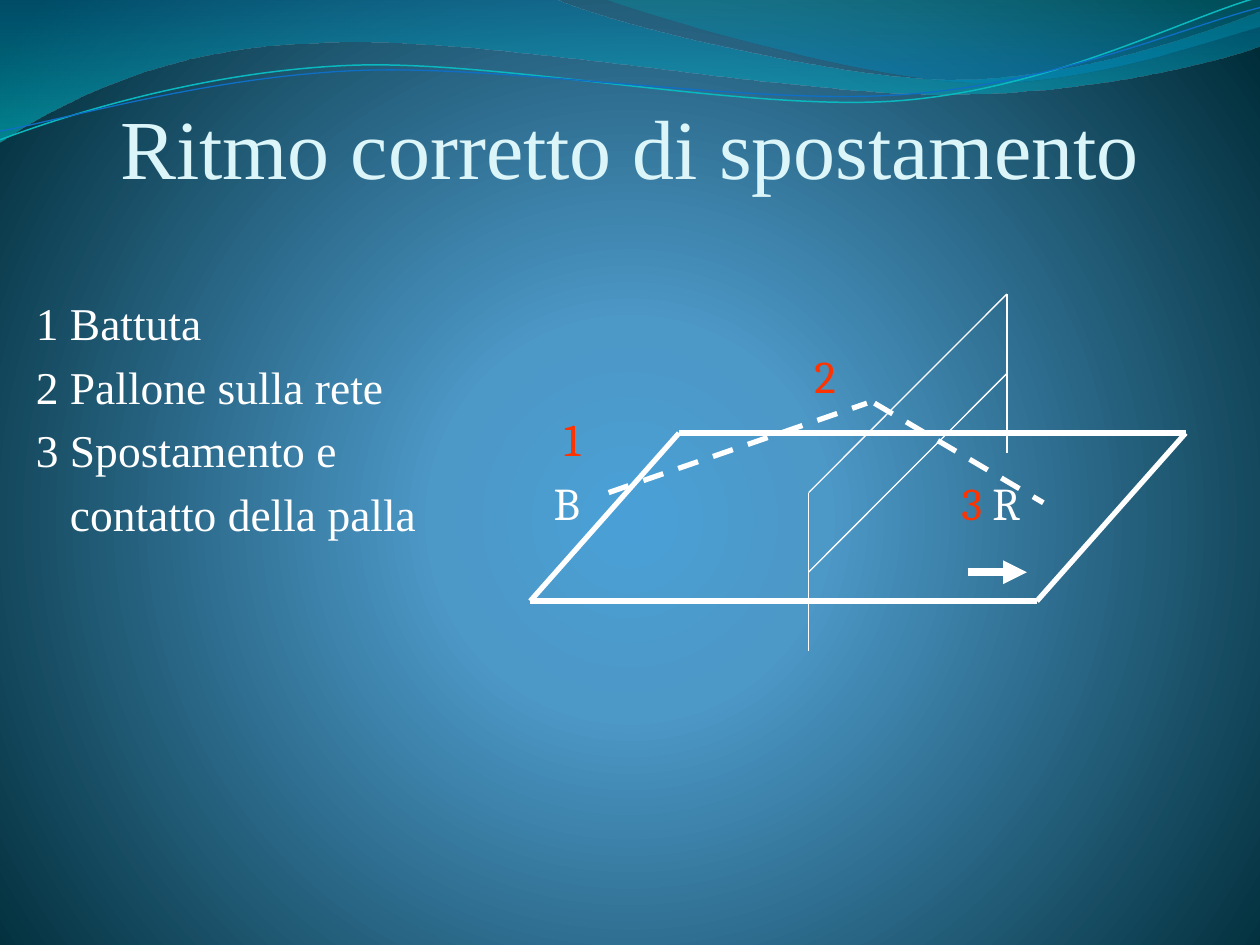
from dataclasses import dataclass

from lxml import etree
from pptx import Presentation
from pptx.dml.color import RGBColor
from pptx.enum.dml import MSO_LINE
from pptx.enum.shapes import MSO_CONNECTOR
from pptx.enum.text import MSO_ANCHOR, PP_ALIGN
from pptx.oxml.ns import qn
from pptx.util import Pt

DASH = MSO_LINE.DASH
STRAIGHT = MSO_CONNECTOR.STRAIGHT
BOTTOM = MSO_ANCHOR.BOTTOM
LEFT, CENTER = PP_ALIGN.LEFT, PP_ALIGN.CENTER


@dataclass(frozen=True)
class Theme:
    """Colours, fonts and sizes of the slide."""
    white: str = "FFFFFF"
    red: str = "FF3300"
    pale: str = "DBF5F9"
    aqua: str = "0AB8BF"
    blue: str = "0F6FC6"
    serif: str = "Times New Roman"
    label: str = "Cambria"
    head: float = 48
    body: float = 26
    gap: float = 5.2
    thin: float = 0.75
    bold: float = 3
    heavy: float = 4.5
    back: tuple = ((0, "4AA0D6", 100), (25, "4C98C7", 100), (100, "002C38", 100))
    deep: tuple = ((0, "0074A1", 45), (100, "00C6CF", 55))
    teal: tuple = ((0, "00A1A9", 30), (80, "008BBF", 45))


T = Theme()

BANDS = [
    (T.deep, (0, 0), [
        (316.8, -0.7),
        (342.7, 12.2, 478.1, 45.4, 545.8, 45.4),
        (614.2, 45.4, 689.8, 18.7, 720, 6.5),
        (720.7, 25.9),
        (707.8, 31.7, 626.4, 54.7, 537.1, 54),
        (447.8, 54, 275, 20.2, 185, 24.5),
        (92.9, 25.9, 33.1, 59.8, -0.7, 81.4)]),
    (T.teal, (344.9, -0.7), [
        (366.5, 7.9, 491, 44.6, 553.7, 46.8),
        (616.3, 49.7, 691.9, 23, 720, 15.1),
        (720, 0)]),
]
CURLS = [
    (T.aqua, 0.85, (0, 79.9), [
        (34.6, 67, 113.8, 41, 199.4, 37.4),
        (284.4, 33.8, 427, 64.1, 513.4, 57.6),
        (599.8, 51.1, 675.4, 10.8, 718.6, -1.4)]),
    (T.blue, 0.75, (0, 74.9), [
        (33.8, 69.1, 118.1, 43.9, 203.8, 40.3),
        (290.2, 36.7, 429.8, 60.5, 516.2, 54),
        (601.9, 48.2, 677.5, 15.1, 720, 4.3)]),
]


def rgb(code):
    """Turn a hex code into a colour."""
    return RGBColor.from_string(code)


def apply(item, values):
    """Set each attribute named in a dict."""
    for name, value in values.items():
        setattr(item, name, value)


def blend(node, stops, focus=None):
    """Swap a solid fill under node for a gradient."""
    old = node.find(qn("a:solidFill"))
    grad = etree.Element(qn("a:gradFill"), rotWithShape="1")
    row = etree.SubElement(grad, qn("a:gsLst"))
    for pos, code, alpha in stops:
        stop = etree.SubElement(row, qn("a:gs"), pos=str(pos * 1000))
        tone = etree.SubElement(stop, qn("a:srgbClr"), val=code)
        if alpha < 100:
            etree.SubElement(tone, qn("a:alpha"), val=str(alpha * 1000))
    if focus:
        way = etree.SubElement(grad, qn("a:path"), path="circle")
        sides = {side: str(part * 1000) for side, part in zip("ltrb", focus)}
        etree.SubElement(way, qn("a:fillToRect"), **sides)
    else:
        etree.SubElement(grad, qn("a:lin"), ang="5400000", scaled="0")
    node.replace(old, grad)


def outline(slide, box, start, moves, close):
    """Draw an outline of straight and cubic moves inside the box."""
    x, y = box[:2]
    dots = [(Pt(x + m[-2]), Pt(y + m[-1])) for m in [start] + moves]
    pen = slide.shapes.build_freeform(*dots[0])
    pen.add_line_segments(dots[1:], close=close)
    shape = pen.convert_to_shape()
    shape.shadow.inherit = False
    lines = list(shape._element.iter(qn("a:lnTo")))
    for node, move in zip(lines, moves):
        if len(move) == 6:
            curve = etree.Element(qn("a:cubicBezTo"))
            for a, b in zip(move[::2], move[1::2]):
                etree.SubElement(curve, qn("a:pt"),
                                 x=str(Pt(x + a) - shape.left),
                                 y=str(Pt(y + b) - shape.top))
            node.getparent().replace(node, curve)
    return shape


def wave(slide, box):
    """Draw the bands and curls along the top."""
    for stops, start, moves in BANDS:
        shape = outline(slide, box, start, moves, True)
        shape.line.fill.background()
        shape.fill.solid()
        blend(shape.fill._xPr, stops)
    for code, width, start, moves in CURLS:
        shape = outline(slide, box, start, moves, False)
        shape.fill.background()
        shape.line.color.rgb = rgb(code)
        shape.line.width = Pt(width)


def write(slide, box, rows, font, size, inset=(0, 0), gap=0, align=LEFT,
          tab=None, **frame):
    """Write rows of (indent, runs), each run a text and a colour."""
    area = slide.shapes.add_textbox(*map(Pt, box)).text_frame
    apply(area, {"word_wrap": True, "margin_left": Pt(inset[0]),
                 "margin_top": Pt(inset[1]), "margin_right": 0,
                 "margin_bottom": 0, **frame})
    for n, (indent, runs) in enumerate(rows):
        para = area.add_paragraph() if n else area.paragraphs[0]
        apply(para, {"alignment": align, "space_after": Pt(gap)})
        props = para._p.get_or_add_pPr()
        if indent:
            props.set("marL", str(Pt(indent)))
        if tab:
            stops = etree.SubElement(props, qn("a:tabLst"))
            etree.SubElement(stops, qn("a:tab"), pos=str(Pt(tab)), algn="l")
        for text, code in runs:
            run = para.add_run()
            run.text = text
            apply(run.font, {"name": font, "size": Pt(size)})
            run.font.color.rgb = rgb(code)


def title(slide, box):
    """Write the heading at the foot of its box."""
    write(slide, box, [(0, [("Ritmo corretto di spostamento", T.pale)])],
          T.serif, T.head, align=CENTER, vertical_anchor=BOTTOM)


def steps(slide, box):
    """Write the numbered steps."""
    rows = [(0, "1 Battuta"), (0, "2 Pallone sulla rete"),
            (0, "3 Spostamento e"), (19.5, "contatto della palla")]
    write(slide, box, [(indent, [(text, T.white)]) for indent, text in rows],
          T.serif, T.body, inset=(20.5, 40.3), gap=T.gap)


def marks(slide, box):
    """Write the labels of the players and moments."""
    rows = [(149, [("2", T.red)]), (5.8, [("1", T.red)]),
            (0, [("B\t", T.white), ("3 ", T.red), ("R", T.white)])]
    write(slide, box, rows, T.label, T.body, inset=(52.9, 76.3), gap=T.gap,
          tab=233)


def court(slide, box):
    """Draw the court, the net, the ball flight and the move."""
    x, y, wide = box[:3]

    def line(start, end, width, dash=None, arrow=False):
        """Draw one white line within the box."""
        ends = [Pt(v) for a, b in (start, end) for v in (x + a, y + b)]
        link = slide.shapes.add_connector(STRAIGHT, *ends)
        link.line.color.rgb = rgb(T.white)
        apply(link.line, {"width": Pt(width), "dash_style": dash})
        if arrow:
            etree.SubElement(link.line._get_or_add_ln(), qn("a:tailEnd"),
                             type="triangle")
        etree.SubElement(link._element.spPr, qn("a:effectLst"))

    slant, top, base = 85, 79.5, 175.5
    side = wide - slant
    for left in (0, side):
        line((left + slant, top), (left, base), T.bold)
    for left, level in ((slant, top), (0, base)):
        line((left, level), (left + side, level), T.bold)

    near, far, rise, drop = 159.1, 272.4, 113.5, 45.4
    for post, peak in ((near, rise), (far, 0)):
        line((post, peak + 2 * drop), (post, peak), T.thin)
    for fall in (0, drop):
        line((near, rise + fall), (far, fall), T.thin)

    line((44.8, 113.5), (192.4, 62.4), T.bold, DASH)
    line((196.7, 62.4), (293.2, 119.3), T.bold, DASH)
    line((250, 159), (283.8, 159), T.heavy, arrow=True)


def main():
    """Build and save the slide."""
    deck = Presentation()
    apply(deck, {"slide_width": Pt(720), "slide_height": Pt(540)})
    slide = deck.slides.add_slide(deck.slide_layouts[6])
    fill = slide.background.fill
    fill.solid()
    blend(fill._xPr, T.back, (10, 110, 10, 100))
    wave(slide, (0, 0, 720, 82))
    title(slide, (36, 16.5, 648, 95.5))
    steps(slide, (0, 128.2, 293, 356.4))
    marks(slide, (263.5, 122.4, 403.2, 356.4))
    court(slide, (303, 168, 374.5, 204.5))
    deck.save("out.pptx")


if __name__ == "__main__":
    main()
